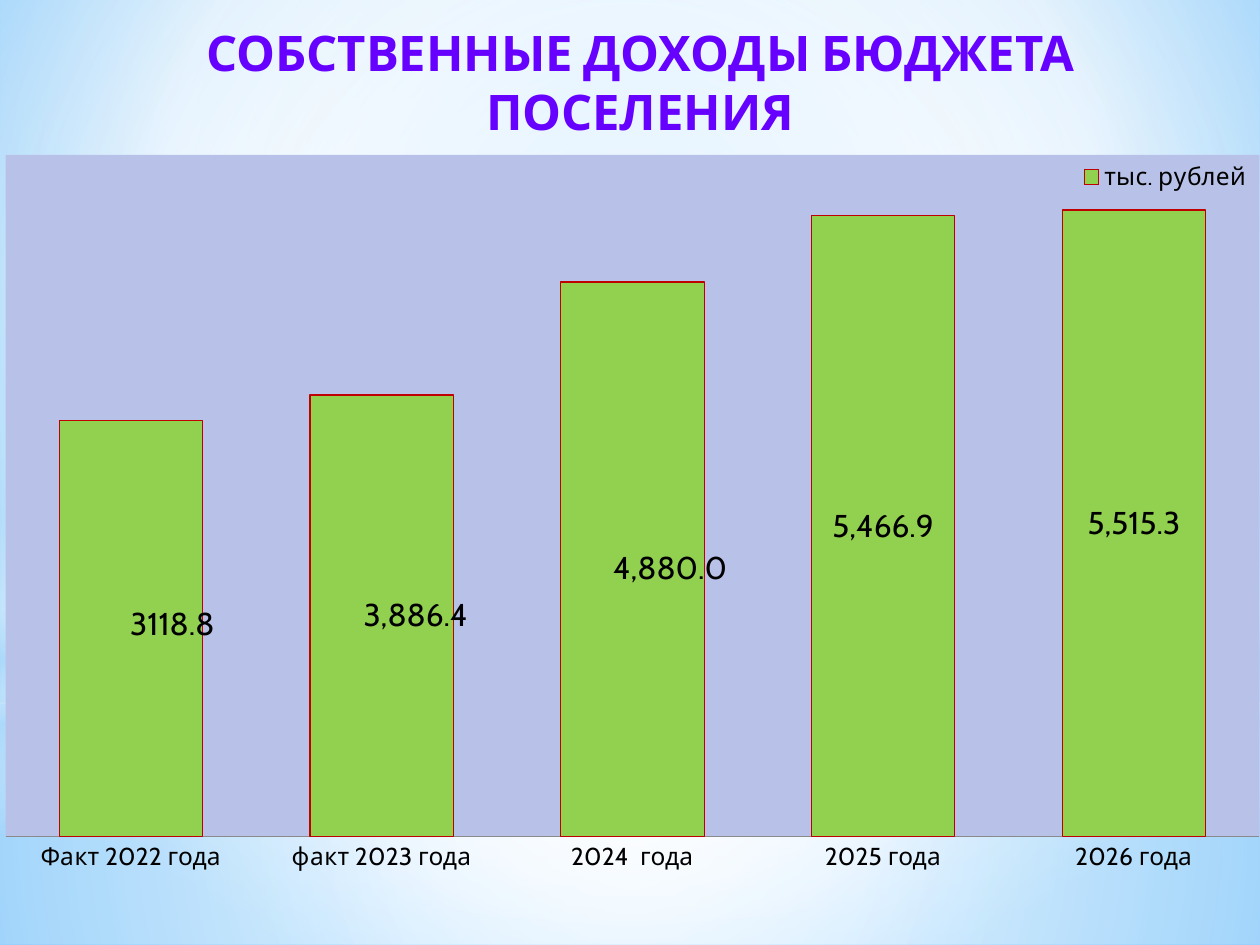
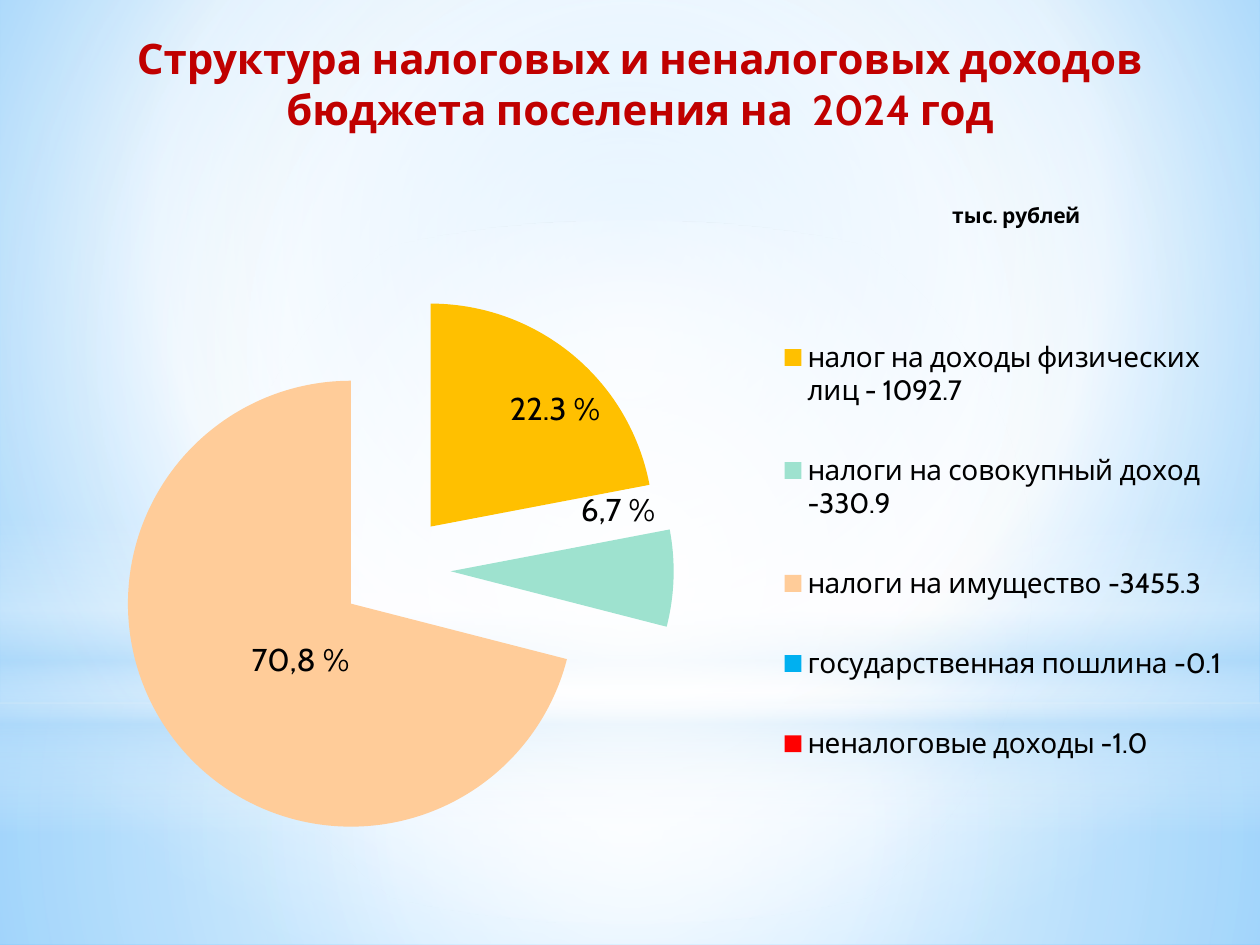
"""Builds two budget slides: own revenue by year and its structure for 2024."""
from dataclasses import dataclass

from lxml import etree
from pptx import Presentation
from pptx import util as u
from pptx.chart.data import CategoryChartData
from pptx.dml.color import RGBColor as Rgb
from pptx.enum import chart as kinds, shapes, text
from pptx.oxml import parse_xml
from pptx.oxml.ns import nsdecls, qn


@dataclass(frozen=True)
class Theme:
    font: str = "Cabin"
    ink: str = "000000"
    white: str = "FFFFFF"
    sky: str = "B4DCFA"
    plot: str = "B8C2E9"
    bar: str = "92D050"
    edge: str = "C00000"
    axis: str = "8A8A8A"
    slices: tuple = ("FFC000", "9EE2CF", "FFCC99", "00B0F0", "FF0000")
    label: int = 18
    key: int = 16
    small: int = 14
    note: int = 12


T = Theme()
deck = Presentation()
deck.slide_width, deck.slide_height = u.Inches(10), u.Inches(7.5)
size = (deck.slide_width, deck.slide_height) * 2


def span(box):
    """Turns percent of the slide into lengths."""
    return [int(part * full / 100) for part, full in zip(box, size)]


def place(chart, query, spot, index):
    """Gives a chart part a manual layout in percent of the chart."""
    node = chart.element.xpath(query)[0]
    for old in node.findall(qn("c:layout")):
        node.remove(old)
    layout = parse_xml(f"<c:layout {nsdecls('c')}><c:manualLayout/></c:layout>")
    if node.tag == qn("c:plotArea"):
        etree.SubElement(layout[0], qn("c:layoutTarget")).set("val", "inner")
    if node.tag != qn("c:dLbl"):
        for tag in ("xMode", "yMode"):
            etree.SubElement(layout[0], qn(f"c:{tag}")).set("val", "edge")
    for tag, share in zip("xywh", spot):
        etree.SubElement(layout[0], qn(f"c:{tag}")).set("val", f"{share / 100:.4f}")
    node.insert(index, layout)


titles = (
    ("СОБСТВЕННЫЕ ДОХОДЫ БЮДЖЕТА ПОСЕЛЕНИЯ", (3.3, 1.73, 95, 13.6), 28, "6600FF"),
    ("Структура налоговых и неналоговых доходов бюджета поселения на  2024 год",
     (3.3, 2.8, 95, 14.67), 24, "C00000"),
)
pages = []
for words, box, points, tint in titles:
    page = deck.slides.add_slide(deck.slide_layouts[5])
    head = page.shapes.title
    head.left, head.top, head.width, head.height = span(box)
    frame = head.text_frame
    frame.text = words
    frame.word_wrap = True
    frame.auto_size = text.MSO_AUTO_SIZE.NONE
    frame.vertical_anchor = text.MSO_ANCHOR.TOP
    para = frame.paragraphs[0]
    para.alignment = text.PP_ALIGN.CENTER
    font = para.font
    font.name, font.size, font.bold = T.font, u.Pt(points), True
    font.color.rgb = Rgb.from_string(tint)
    pages.append(page)

rect, oval = shapes.MSO_SHAPE.RECTANGLE, shapes.MSO_SHAPE.OVAL
mid = (50, 50, 50, 50)
coats = (
    (None, None, ((0, "9ED5FF", 100), (60, T.white, 100), (100, "5BB9FF", 100)), (20, 10, 20, 60)),
    (rect, (0, 74.4, 100, 25.6), ((0, T.white, 91), (37, T.white, 76), (100, T.sky, 79)), mid),
    (rect, (0, 0, 100, 74.4), ((0, T.white, 89), (48, T.white, 62), (100, T.sky, 79)), mid),
    (rect, (0, 54.93, 100, 33.33),
     ((0, T.white, 0), (29, T.white, 30), (45, T.sky, 40), (55, T.white, 26),
      (65, T.sky, 60), (100, T.white, 0)), None),
    (oval, (0, 23.33, 100, 74.4), ((0, T.white, 100), (56, T.white, 0)), mid),
)
master = deck.slide_master
for order, (kind, box, stops, aim) in enumerate(coats, 1):
    if kind is None:
        master.background.fill.gradient()
        props = master.element.xpath(".//p:bgPr")[0]
    else:
        coat = pages[0].shapes.add_shape(kind, *span(box))
        coat.shadow.inherit = False
        coat.line.fill.background()
        coat.fill.gradient()
        coat.element.nvSpPr.cNvPr.set("id", str(100 + order))
        master.shapes.element.insert(order, coat.element)
        props = coat.element.spPr
    marks = "".join(
        f'<a:gs pos="{pos * 1000}"><a:srgbClr val="{tint}"><a:alpha val="{alpha * 1000}"/>'
        "</a:srgbClr></a:gs>" for pos, tint, alpha in stops)
    way = '<a:lin ang="5400000" scaled="0"/>'
    if aim:
        sides = " ".join(f'{side}="{share * 1000}"' for side, share in zip("ltrb", aim))
        way = f'<a:path path="circle"><a:fillToRect {sides}/></a:path>'
    props.replace(props.find(qn("a:gradFill")), parse_xml(
        f'<a:gradFill {nsdecls("a")} rotWithShape="1"><a:gsLst>{marks}</a:gsLst>{way}</a:gradFill>'))

years = ("Факт 2022 года", "факт 2023 года", "2024  года", "2025 года", "2026 года")
taxes = ("налог на доходы физических лиц - 1092.7", "налоги на совокупный доход -330.9",
         "налоги на имущество -3455.3", "государственная пошлина -0.1",
         "неналоговые доходы -1.0")
graphs = (
    (kinds.XL_CHART_TYPE.COLUMN_STACKED, (0.4, 16.4, 99.6, 77.73), years,
     (3663.4, 3886.4, 4880, 5466.9, 5515.3), "#,##0.0",
     (0, 0, 100, 92.8), (85.5, 0.5, 14, 5), T.small,
     (("3118.8", 3.3, -0.5), (None, 2.7, 0), (None, 3, 1.3))),
    (kinds.XL_CHART_TYPE.PIE, (2, 15.33, 96.4, 78.8), taxes,
     (22, 7, 71, 0, 0), "General",
     (7.5, 19.6, 45.9, 74.9), (62, 20, 37, 69), T.key,
     (("22.3 %", 4.4, -4.2), ("6,7 %", 4.6, -8.7), ("70,8 %", 3.1, -1.6),
      ("0,0 %", -3.9, -3), ("0,2 %", 7.6, -4))),
)
charts = []
for page, (kind, box, cats, vals, form, area, key, points, tags) in zip(pages, graphs):
    data = CategoryChartData(number_format=form)
    data.categories = cats
    data.add_series("тыс. рублей", vals)
    chart = page.shapes.add_chart(kind, *span(box), data).chart
    chart.font.name, chart.font.size = T.font, u.Pt(T.label)
    chart.font.color.rgb = Rgb.from_string(T.ink)
    chart.has_title = False
    chart.has_legend = True
    chart.legend.position = kinds.XL_LEGEND_POSITION.RIGHT
    chart.legend.include_in_layout = False
    chart.legend.font.size = u.Pt(points)
    place(chart, ".//c:legend", key, 1)
    place(chart, ".//c:plotArea", area, 0)
    row = chart.plots[0].series[0]
    notes = row.data_labels
    notes.show_value = True
    notes.number_format, notes.number_format_is_linked = form, False
    notes.position = kinds.XL_LABEL_POSITION.CENTER
    for index, (words, right, down) in enumerate(tags):
        tag = row.points[index].data_label
        font = tag.font
        if words:
            run = tag.text_frame.paragraphs[0].add_run()
            run.text = words
            font = run.font
        font.name, font.size = T.font, u.Pt(T.label)
        font.color.rgb = Rgb.from_string(T.ink)
        tag.position = (kinds.XL_LABEL_POSITION.CENTER if vals[index]
                        else kinds.XL_LABEL_POSITION.OUTSIDE_END)
        place(chart, f".//c:dLbl[c:idx/@val='{index}']", (right, down), 1)
    charts.append(chart)

bars, pie = charts
plot = bars.plots[0]
plot.gap_width, plot.overlap, plot.vary_by_categories = 75, 100, False
look = plot.series[0].format
look.fill.solid()
look.fill.fore_color.rgb = Rgb.from_string(T.bar)
look.line.color.rgb = Rgb.from_string(T.edge)
look.line.width = u.Pt(0.75)
bars.value_axis.visible = False
bars.value_axis.has_major_gridlines = False
bars.value_axis.minimum_scale, bars.value_axis.maximum_scale = 0, 6000
base = bars.category_axis
base.major_tick_mark = kinds.XL_TICK_MARK.NONE
base.tick_labels.font.size = u.Pt(T.small)
base.format.line.color.rgb = Rgb.from_string(T.axis)
bars.element.xpath(".//c:plotArea")[0].append(parse_xml(
    f'<c:spPr {nsdecls("c", "a")}><a:solidFill><a:srgbClr val="{T.plot}"/></a:solidFill></c:spPr>'))

pie.plots[0].vary_by_categories = True
row = pie.plots[0].series[0]
for index, tint in enumerate(T.slices):
    look = row.points[index].format
    look.fill.solid()
    look.fill.fore_color.rgb = Rgb.from_string(tint)
    look.line.fill.background()
first = pie.element.xpath(".//c:ser/c:dPt")[0]
for node in [first, *pie.element.xpath(".//c:dPt/c:spPr")]:
    node.addprevious(parse_xml(f'<c:explosion {nsdecls("c")} val="25"/>'))
pie.has_title = True
para = pie.chart_title.text_frame.paragraphs[0]
para.text = "тыс. рублей"
para.font.name, para.font.size, para.font.bold = T.font, u.Pt(T.note), True
para.font.color.rgb = Rgb.from_string(T.ink)
place(pie, ".//c:chart/c:title", (76, 7), 1)

deck.save("out.pptx")
